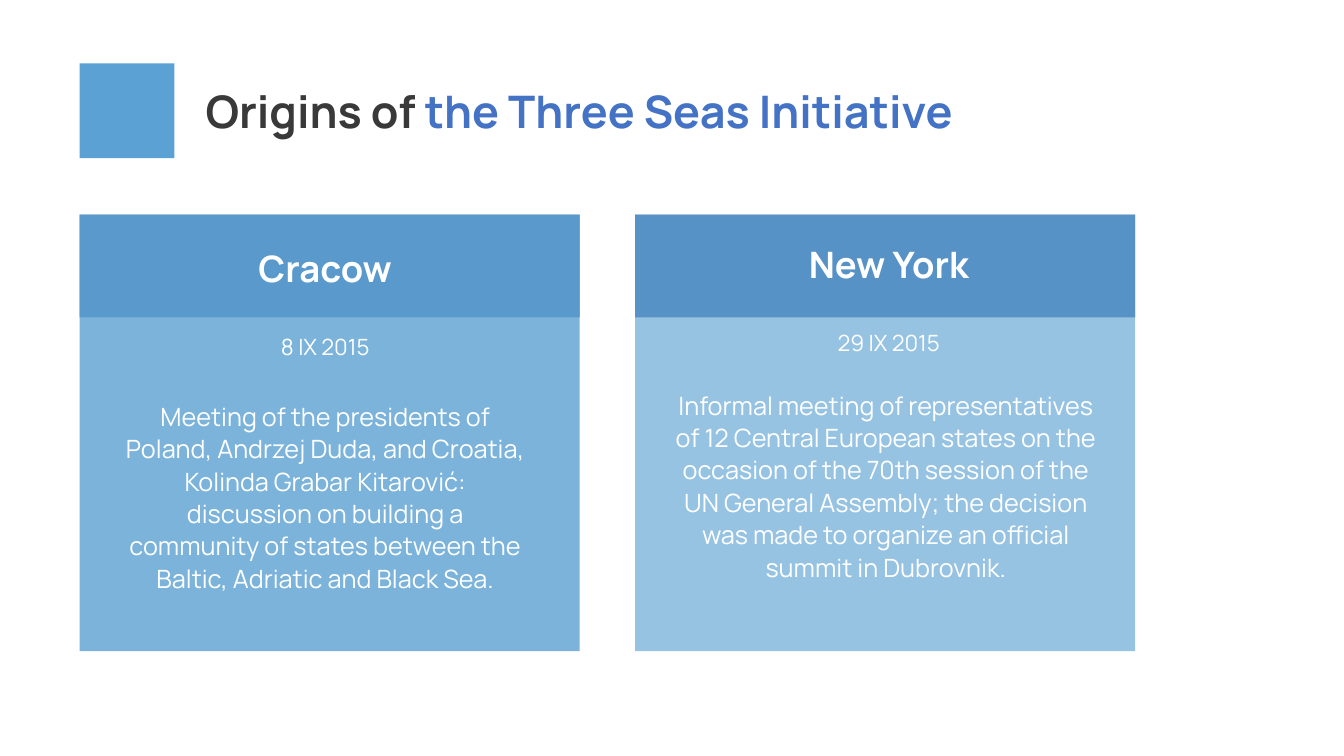
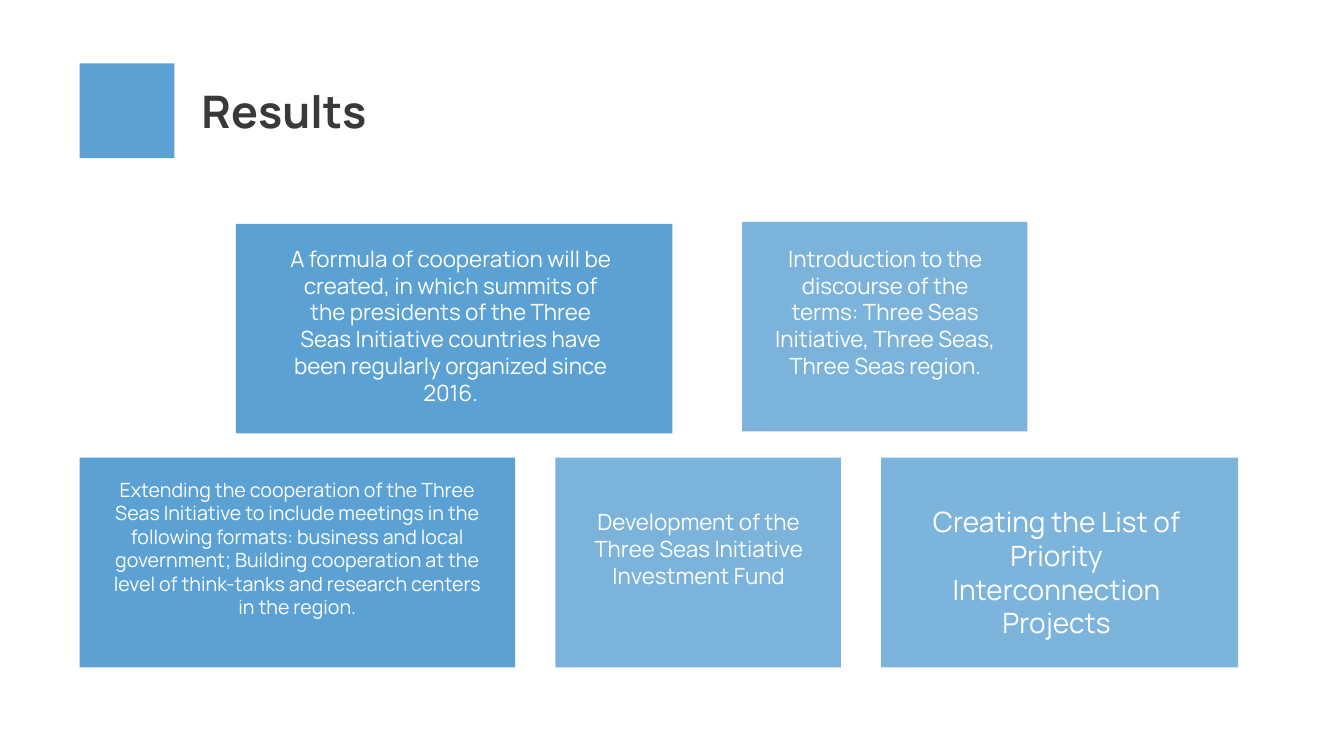
from dataclasses import dataclass
from typing import NamedTuple

from lxml import etree
from pptx import Presentation
from pptx.dml.color import RGBColor
from pptx.enum.shapes import MSO_SHAPE
from pptx.enum.text import MSO_AUTO_SIZE, PP_ALIGN
from pptx.oxml.ns import qn
from pptx.util import Pt

RECTANGLE = MSO_SHAPE.RECTANGLE
GROW = MSO_AUTO_SIZE.SHAPE_TO_FIT_TEXT
CENTER, LEFT = PP_ALIGN.CENTER, PP_ALIGN.LEFT

PX = 9144  # EMU, 100 px to the inch
FONT = "Manrope"
SKY = RGBColor(0x5B, 0xA1, 0xD3)
PALE_SKY = RGBColor(0x7C, 0xB4, 0xDC)
NAVY = RGBColor(0x34, 0x65, 0xA4)
ACCENT = RGBColor(0x44, 0x72, 0xC4)
DARK = RGBColor(0x39, 0x39, 0x39)
WHITE = RGBColor(0xFF, 0xFF, 0xFF)

MARGIN = 79
CARD_W, CARD_H, CARD_TOP, CARD_HEAD_H, CARD_STEP = 496, 433, 213, 102, 551
TILE_H, ROW_TOP, ROW_GAP = 208, 454, 40


class Box(NamedTuple):
    left: int
    top: int
    width: int
    height: int


class Line(NamedTuple):
    text: str
    size: int
    bold: bool = False


@dataclass
class Card:
    city: str
    date: str
    story: str
    head_box: Box
    story_box: Box
    opacity: int


@dataclass
class Tile:
    text: str
    size: int
    box: Box
    text_box: Box
    color: RGBColor = SKY
    opacity: int = 100


def add_rect(slide, box: Box, color: RGBColor, opacity: int = 100) -> None:
    s = slide.shapes.add_shape(RECTANGLE, *(v * PX for v in box))
    s.shadow.inherit = False
    s.fill.solid()
    s.fill.fore_color.rgb = color
    s.line.fill.background()
    if opacity < 100:
        srgb = s._element.spPr.find(".//" + qn("a:srgbClr"))
        etree.SubElement(srgb, qn("a:alpha"), val=str(opacity * 1000))


def add_frame(slide, box: Box):
    tf = slide.shapes.add_textbox(*(v * PX for v in box)).text_frame
    tf.word_wrap = True
    tf.auto_size = GROW
    return tf


def style(p, size: int, bold: bool, align) -> None:
    p.alignment = align
    p.font.name = FONT
    p.font.size = Pt(size)
    p.font.bold = bold


def add_text(slide, box: Box, lines: list[Line], spacing: float = 1.0, gap: float = 0) -> None:
    """Centred white paragraphs with gap points on each side of every paragraph."""
    tf = add_frame(slide, box)
    for i, line in enumerate(lines):
        p = tf.add_paragraph() if i else tf.paragraphs[0]
        p.text = line.text
        style(p, line.size, line.bold, CENTER)
        p.font.color.rgb = WHITE
        p.line_spacing = spacing
        p.space_before = Pt(gap if i else 0)
        p.space_after = Pt(gap)


def add_title(slide, left: int, *parts: tuple[str, RGBColor]) -> None:
    add_rect(slide, Box(MARGIN, 63, 94, 94), SKY)
    p = add_frame(slide, Box(left, 78, 1130, 64)).paragraphs[0]
    style(p, 32, True, LEFT)
    for text, color in parts:
        r = p.add_run()
        r.text = text
        r.font.color.rgb = color


def add_card(slide, left: int, card: Card) -> None:
    add_rect(slide, Box(left, CARD_TOP, CARD_W, CARD_HEAD_H), NAVY, 85)
    add_rect(slide, Box(left, CARD_TOP, CARD_W, CARD_H), SKY, card.opacity)
    add_text(slide, card.head_box, [Line(card.city, 26, True), Line(card.date, 16)], 1.07, 14.8)
    add_text(slide, card.story_box, [Line(card.story, 18)], 1.07, 12)


def add_tile(slide, tile: Tile) -> None:
    add_rect(slide, tile.box, tile.color, tile.opacity)
    add_text(slide, tile.text_box, [Line(tile.text, tile.size)])


def row_boxes(widths: list[int]) -> list[Box]:
    """Boxes of the bottom row, with equal gaps."""
    return [Box(MARGIN + sum(widths[:i]) + i * ROW_GAP, ROW_TOP, w, TILE_H)
            for i, w in enumerate(widths)]


CARDS = [
    Card("Cracow", "8 IX 2015",
         "Meeting of the presidents of Poland, Andrzej Duda, and Croatia, Kolinda Grabar "
         "Kitarović: discussion on building a community of states between the Baltic, "
         "Adriatic and Black Sea.",
         Box(110, 236, 425, 126), Box(110, 391, 425, 235), 80),
    Card("New York", "29 IX 2015",
         "Informal meeting of representatives of 12 Central European states on the occasion "
         "of the 70th session of the UN General Assembly; the decision was made to organize "
         "an official summit in Dubrovnik.",
         Box(669, 232, 425, 126), Box(654, 380, 449, 235), 63),
]

FORMATS_BOX, FUND_BOX, PROJECTS_BOX = row_boxes([432, 283, 354])
TILES = [
    Tile("A formula of cooperation will be created, in which summits of the presidents of "
         "the Three Seas Initiative countries have been regularly organized since 2016.",
         16, Box(234, 222, 433, TILE_H), Box(278, 238, 338, 198)),
    Tile("Introduction to the discourse of the terms: Three Seas Initiative, Three Seas, "
         "Three Seas region.",
         16, Box(736, 220, 283, TILE_H), Box(756, 238, 244, 172), opacity=80),
    Tile("Extending the cooperation of the Three Seas Initiative to include meetings in the "
         "following formats: business and local government; Building cooperation at the "
         "level of think-tanks and research centers in the region.",
         14, FORMATS_BOX, Box(98, 469, 394, 175)),
    Tile("Development of the Three Seas Initiative Investment Fund",
         16, FUND_BOX, Box(571, 499, 244, 91), opacity=80),
    Tile("Creating the List of Priority Interconnection Projects",
         20, PROJECTS_BOX, Box(898, 496, 300, 145), PALE_SKY),
]


def main() -> None:
    prs = Presentation()
    prs.slide_width, prs.slide_height = 1333 * PX, 750 * PX
    blank = prs.slide_layouts[6]

    origins = prs.slides.add_slide(blank)
    add_title(origins, 194, ("Origins of ", DARK), ("the Three Seas Initiative", ACCENT))
    for i, card in enumerate(CARDS):
        add_card(origins, MARGIN + i * CARD_STEP, card)

    results = prs.slides.add_slide(blank)
    add_title(results, 190, ("Results", DARK))
    for tile in TILES:
        add_tile(results, tile)

    prs.save("out.pptx")


if __name__ == "__main__":
    main()
